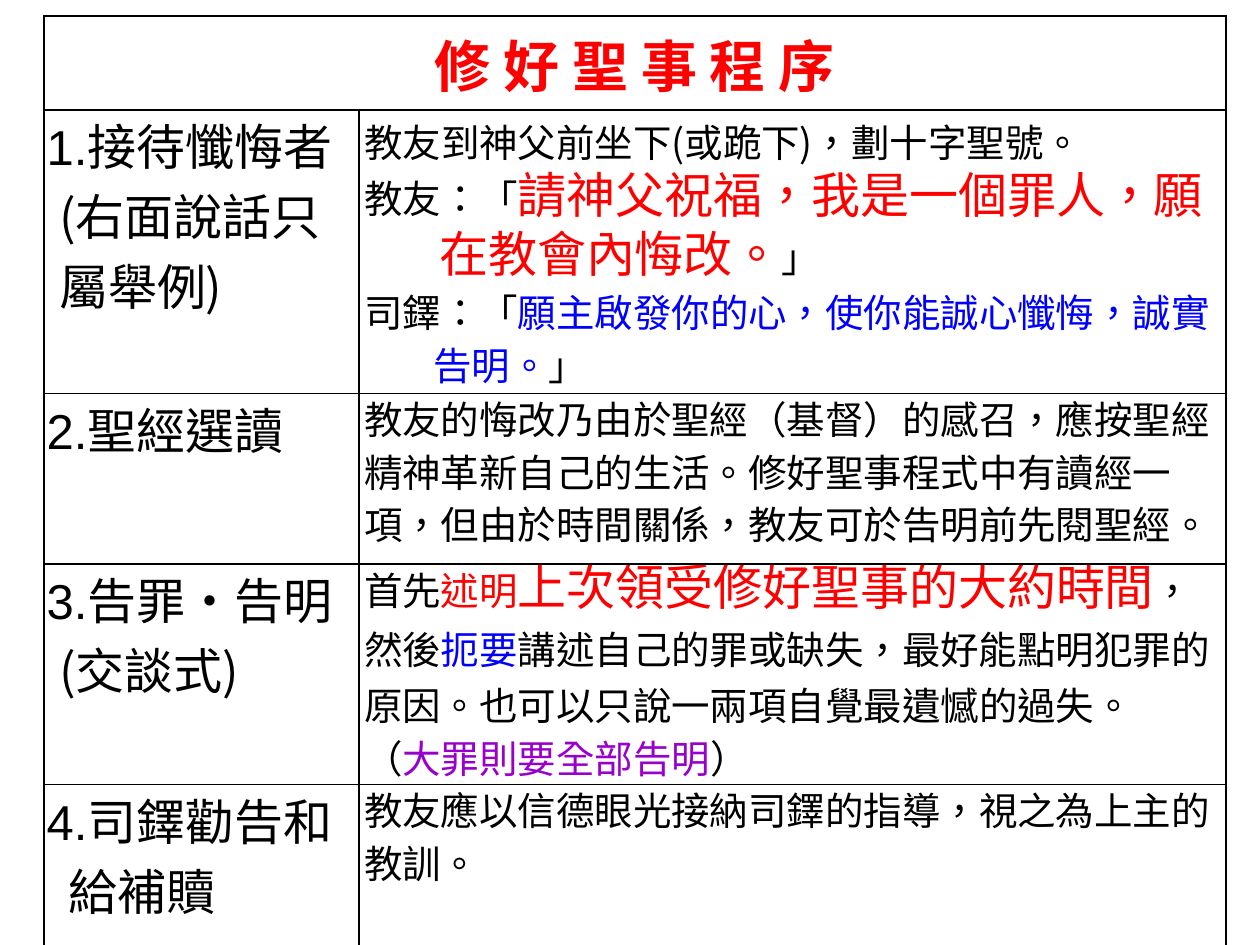
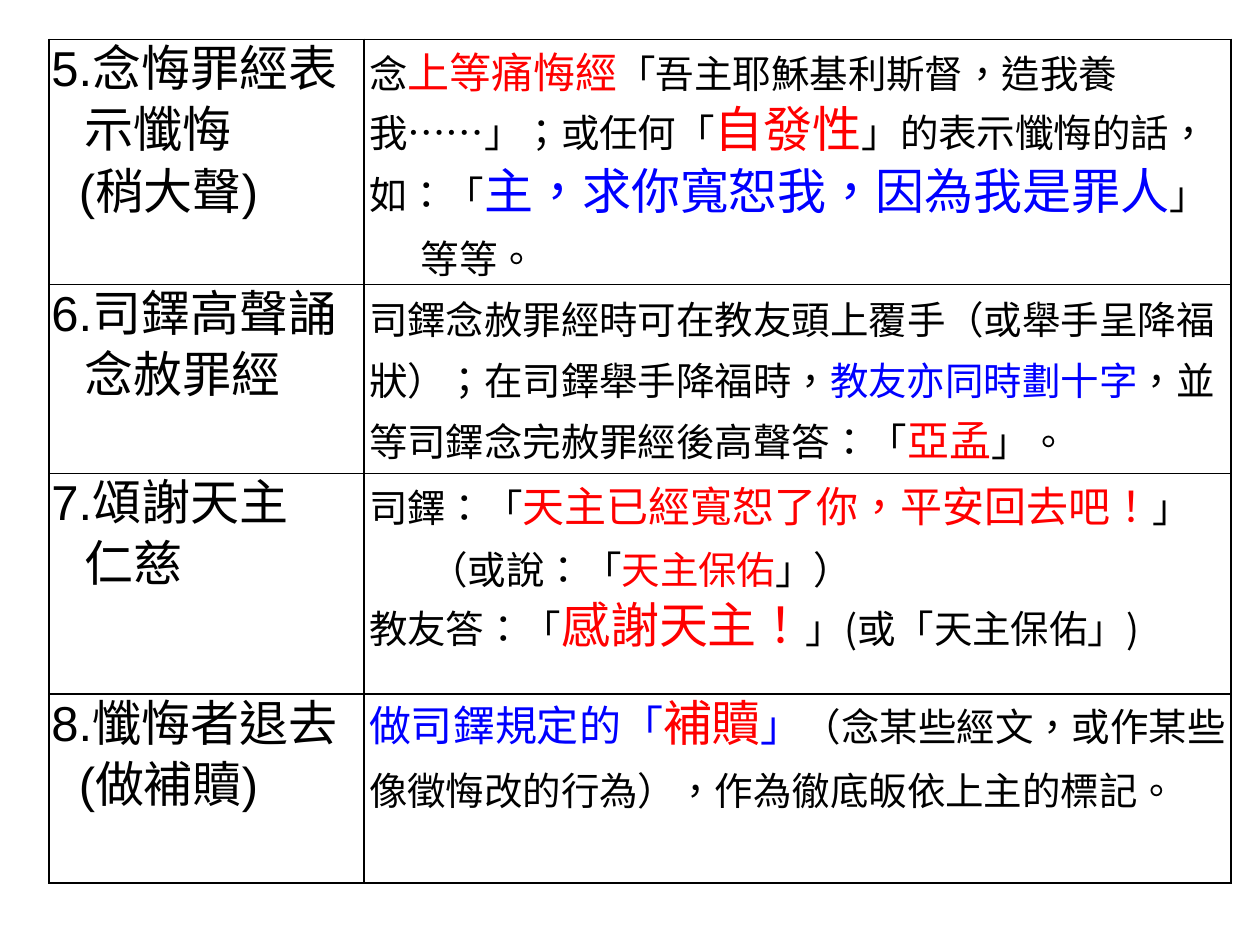
import pptx
import pptx.dml.color
import pptx.enum.text
import pptx.oxml.ns
import pptx.util
from dataclasses import dataclass
from lxml import etree

Pt = pptx.util.Pt


# ---- Theme: colours, fonts, type sizes ----
@dataclass(frozen=True)
class Theme:
    black: str = "000000"
    red: str = "FF0000"
    blue: str = "0000FF"
    purple: str = "9900CC"
    cjk: str = "Noto Sans CJK SC"
    latin: str = "Arial"
    title: int = 32
    large: int = 28
    medium: int = 24
    body: int = 22
    border: int = 1
    inset: float = 1.44


THEME = Theme()
RED, BLUE, PURPLE = THEME.red, THEME.blue, THEME.purple
LARGE, MEDIUM = THEME.large, THEME.medium
COLUMNS = (180, 495.36)


# ---- Content building blocks ----
@dataclass
class Words:
    text: str
    color: str = THEME.black
    size: int = THEME.body
    font: str = THEME.cjk
    bold: bool = False


@dataclass
class Line:
    words: list
    spacing: float = None
    left: float = THEME.inset
    first: float = 0
    centered: bool = False


def add_text(paragraph, text, *, color, size, font, bold):
    run = paragraph.add_run()
    run.text = text
    run.font.size = Pt(size)
    run.font.bold = bold
    run.font.name = font
    run.font.color.rgb = pptx.dml.color.RGBColor.from_string(color)
    # East Asian font and Taiwanese glyph forms
    properties = run._r.get_or_add_rPr()
    properties.set("lang", "zh-TW")
    east_asian = etree.SubElement(properties, pptx.oxml.ns.qn("a:ea"))
    east_asian.set("typeface", THEME.cjk)


def step_label(number, name, *continuations, spacing, font):
    """Numbered step name; each continuation is (left, text)."""
    lines = [Line([Words(number, size=LARGE, font=THEME.latin),
                   Words(name, size=LARGE, font=font)], spacing, 7.2, -7.2)]
    for left, text in continuations:
        lines.append(Line([Words(text, size=LARGE, font=font)], spacing, left))
    return lines


def opening_label(number, name, *continuations):
    return step_label(number, name, *continuations, spacing=40, font=THEME.cjk)


def closing_label(number, name, *continuations):
    return step_label(number, name, *continuations, spacing=35, font=THEME.latin)


def speech(spacing, *words):
    return Line(list(words), spacing, 13, -11.5)


def prose(spacing, *words, left=THEME.inset):
    return Line(list(words), spacing, left)


# ---- Slide builder ----
class Deck:
    def __init__(self, theme):
        self.theme = theme
        self.presentation = pptx.Presentation()
        self.presentation.slide_width = Pt(720)
        self.presentation.slide_height = Pt(540)
        self.slide = None

    def new_slide(self):
        self.slide = self.presentation.slides.add_slide(
            self.presentation.slide_layouts[6])

    def steps_table(self, left, top, heights, steps, title=None):
        frame = self.slide.shapes.add_table(
            len(heights), len(COLUMNS), Pt(left), Pt(top),
            Pt(sum(COLUMNS)), Pt(sum(heights)))
        table = frame.table
        table.first_row = table.horz_banding = False
        for column, width in zip(table.columns, COLUMNS):
            column.width = Pt(width)
        for row, height in zip(table.rows, heights):
            row.height = Pt(height)
        for cell in table.iter_cells():
            self.cell_style(cell)
        if title:
            heading = table.cell(0, 0)
            heading.merge(table.cell(0, 1))
            heading.margin_left = heading.margin_right = Pt(7.2)
            heading.margin_top = heading.margin_bottom = Pt(3.6)
            self.cell_text(heading, [title])
        first_step = 1 if title else 0
        for row, step in enumerate(steps, first_step):
            for column, lines in enumerate(step):
                self.cell_text(table.cell(row, column), lines)

    def cell_style(self, cell):
        cell.margin_left = cell.margin_right = Pt(self.theme.inset)
        cell.margin_top = cell.margin_bottom = 0
        properties = cell._tc.get_or_add_tcPr()
        qn = pptx.oxml.ns.qn
        for side in ("lnL", "lnR", "lnT", "lnB"):
            edge = etree.SubElement(properties, qn(f"a:{side}"),
                                    w=str(Pt(self.theme.border)))
            fill = etree.SubElement(edge, qn("a:solidFill"))
            etree.SubElement(fill, qn("a:srgbClr"), val=self.theme.black)
        cell.fill.background()

    def cell_text(self, cell, lines):
        frame = cell.text_frame
        for index, line in enumerate(lines):
            paragraph = frame.add_paragraph() if index else frame.paragraphs[0]
            if line.centered:
                paragraph.alignment = pptx.enum.text.PP_ALIGN.CENTER
            if line.spacing:
                paragraph.line_spacing = Pt(line.spacing)
            layout = paragraph._p.get_or_add_pPr()
            layout.set("marL", str(Pt(line.left)))
            layout.set("indent", str(Pt(line.first)))
            # Keep punctuation inside the cell border
            layout.set("hangingPunct", "0")
            for words in line.words:
                add_text(paragraph, words.text, color=words.color,
                         size=words.size, font=words.font, bold=words.bold)


# ---- Steps 1 to 4 ----
TITLE = Line([Words("修 好 聖 事 程 序", RED, THEME.title, bold=True)],
             left=0, centered=True)

OPENING_STEPS = [
    (opening_label("1.", "接待懺悔者(右面說話只屬舉例)"),
     [speech(33.6, Words("教友到神父前坐下(或跪下)，劃十字聖號。")),
      speech(33.6, Words("教友：「"),
             Words("請神父祝福，我是一個罪人，願", RED, LARGE)),
      prose(33.6, Words("在教會內悔改。", RED, LARGE), Words("」"), left=44.4),
      speech(30, Words("司鐸：「"),
             Words("願主啟發你的心，使你能誠心懺悔，誠實", BLUE)),
      prose(30, Words("告明。", BLUE), Words("」"), left=41)]),
    (opening_label("2.", "聖經選讀"),
     [prose(30, Words("教友的悔改乃由於聖經（基督）的感召，應按聖經精神革新自己的生活。"
                      "修好聖事程式中有讀經一項，但由於時間關係，教友可於告明前先閱聖經。"))]),
    (opening_label("3.", "告罪•告明", (7.2, "(交談式)")),
     [prose(32, Words("首先"), Words("述明", RED),
            Words("上次領受修好聖事的大約時間", RED, LARGE),
            Words("，然後"), Words("扼要", BLUE),
            Words("講述自己的罪或缺失，最好能點明犯罪的原因。"
                  "也可以只說一兩項自覺最遺憾的過失。")),
      prose(30, Words("（"), Words("大罪則要全部告明", PURPLE), Words("）"))]),
    (opening_label("4.", "司鐸勸告和", (12.5, "給補贖")),
     [prose(30, Words("教友應以信德眼光接納司鐸的指導，視之為上主的教訓。"))]),
]

# ---- Steps 5 to 8 ----
CLOSING_STEPS = [
    (closing_label("5.", "念悔罪經表", (18.8, "示懺悔"), (15.6, "(稍大聲)")),
     [prose(35, Words("念"), Words("上等痛悔經", RED, MEDIUM),
            Words("「吾主耶穌基利斯督，造我養我……」；或任何「"),
            Words("自發性", RED, LARGE), Words("」的表示懺悔的話，如：「"),
            Words("主，求你寬恕我，因為我是罪人", BLUE, LARGE), Words("」")),
      prose(35, Words("等等。"), left=31)]),
    (closing_label("6.", "司鐸高聲誦", (18.8, "念赦罪經")),
     [prose(35, Words("司鐸念赦罪經時可在教友頭上覆手（或舉手呈降福狀）；在司鐸舉手降福時，"),
            Words("教友亦同時劃十字", BLUE),
            Words("，並等司鐸念完赦罪經後高聲答：「"),
            Words("亞孟", RED, MEDIUM), Words("」。"))]),
    (closing_label("7.", "頌謝天主", (18.8, "仁慈")),
     [prose(35, Words("司鐸：「"),
            Words("天主已經寬恕了你，平安回去吧！", RED, MEDIUM), Words("」")),
      prose(35, Words("（或說：「"), Words("天主保佑", RED), Words("」）"), left=36),
      prose(35, Words("教友答：「"), Words("感謝天主！", RED, LARGE),
            Words("」(或「天主保佑」)"))]),
    (closing_label("8.", "懺悔者退去", (15.6, "(做補贖)")),
     [prose(35, Words("做司鐸規定的「", BLUE, MEDIUM), Words("補贖", RED, LARGE),
            Words("」", BLUE, MEDIUM),
            Words("（念某些經文，或作某些像徵悔改的行為），作為徹底皈依上主的標記。"))]),
]


def main():
    deck = Deck(THEME)
    deck.new_slide()
    deck.steps_table(25.2, 9.2, (45, 162, 97.4, 126, 97.4), OPENING_STEPS, TITLE)
    deck.new_slide()
    deck.steps_table(28, 22.5, (140, 108, 126, 108), CLOSING_STEPS)
    deck.presentation.save("out.pptx")


if __name__ == "__main__":
    main()
